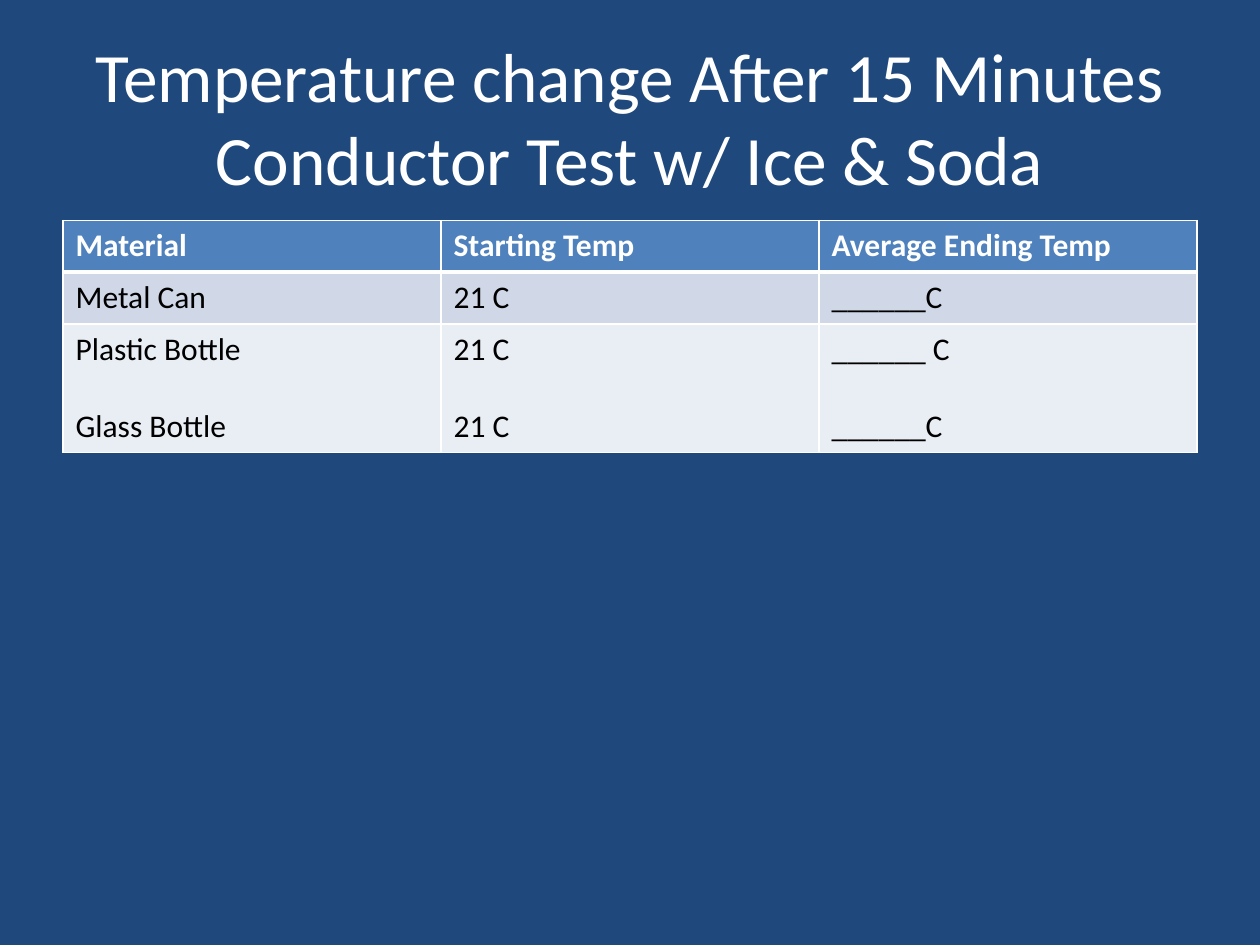
"""Build a slide with a table of soda temperatures by container material."""
import lxml.etree
import pptx
import pptx.dml.color
import pptx.enum.text
import pptx.oxml.ns
import pptx.util

Inches, Pt = pptx.util.Inches, pptx.util.Pt

TITLE = "Temperature change After 15 Minutes Conductor Test w/ Ice & Soda"
ROWS = [
    [["Material"], ["Starting Temp"], ["Average Ending Temp"]],
    [["Metal Can"], ["21 C"], ["______C"]],
    [["Plastic Bottle", "Glass Bottle"], ["21 C", "21 C"], ["______ C", "______C"]],
]
ROW_HEIGHTS = [0.41, 0.41, 1.02]
COL_WIDTH = 3
COLORS = {"background": "1F497D", "white": "FFFFFF", "black": "000000"}
ROW_FILLS = ["4F81BD", "D0D8E8", "E9EDF4"]
FONT = "Calibri"


def rgb(value):
    return pptx.dml.color.RGBColor.from_string(value)


def add_run(p, text, size, color, bold=False):
    r = p.add_run()
    r.text = text
    r.font.name, r.font.size, r.font.bold = FONT, Pt(size), bold
    r.font.color.rgb = rgb(color)


def set_border(cell, side, width):
    qn = pptx.oxml.ns.qn
    tc_pr = cell._tc.get_or_add_tcPr()
    ln = lxml.etree.SubElement(tc_pr, qn("a:" + side), w=str(Pt(width)))
    fill = lxml.etree.SubElement(ln, qn("a:solidFill"))
    lxml.etree.SubElement(fill, qn("a:srgbClr"), val=COLORS["white"])


def add_title(slide):
    sp = slide.shapes.add_textbox(Inches(0.5), Inches(0.3), Inches(9), Inches(1.25))
    tf = sp.text_frame
    tf.word_wrap = True
    tf.vertical_anchor = pptx.enum.text.MSO_ANCHOR.MIDDLE
    p = tf.paragraphs[0]
    p.alignment = pptx.enum.text.PP_ALIGN.CENTER
    add_run(p, TITLE, 39.6, COLORS["white"])


def fill_cell(cell, lines, row):
    header = row == 0
    borders = {"lnL": 1, "lnR": 1, "lnT": 3 if row == 1 else 1, "lnB": 3 if header else 1}
    for side, width in borders.items():
        set_border(cell, side, width)
    cell.fill.solid()
    cell.fill.fore_color.rgb = rgb(ROW_FILLS[row])
    tf = cell.text_frame
    for i, line in enumerate(lines):
        p = tf.add_paragraph() if i else tf.paragraphs[0]
        if i:
            p.space_before = Pt(22)
        add_run(p, line, 18, COLORS["white" if header else "black"], header)


def add_table(slide):
    cols = len(ROWS[0])
    table = slide.shapes.add_table(
        len(ROWS), cols, Inches(0.5), Inches(1.75),
        Inches(COL_WIDTH * cols), Inches(sum(ROW_HEIGHTS))).table
    for column in table.columns:
        column.width = Inches(COL_WIDTH)
    for i, cells in enumerate(ROWS):
        table.rows[i].height = Inches(ROW_HEIGHTS[i])
        for j, lines in enumerate(cells):
            fill_cell(table.cell(i, j), lines, i)


def main():
    prs = pptx.Presentation()
    prs.slide_width, prs.slide_height = Inches(10), Inches(7.5)
    slide = prs.slides.add_slide(prs.slide_layouts[6])
    slide.background.fill.solid()
    slide.background.fill.fore_color.rgb = rgb(COLORS["background"])
    add_title(slide)
    add_table(slide)
    prs.save("out.pptx")


if __name__ == "__main__":
    main()
